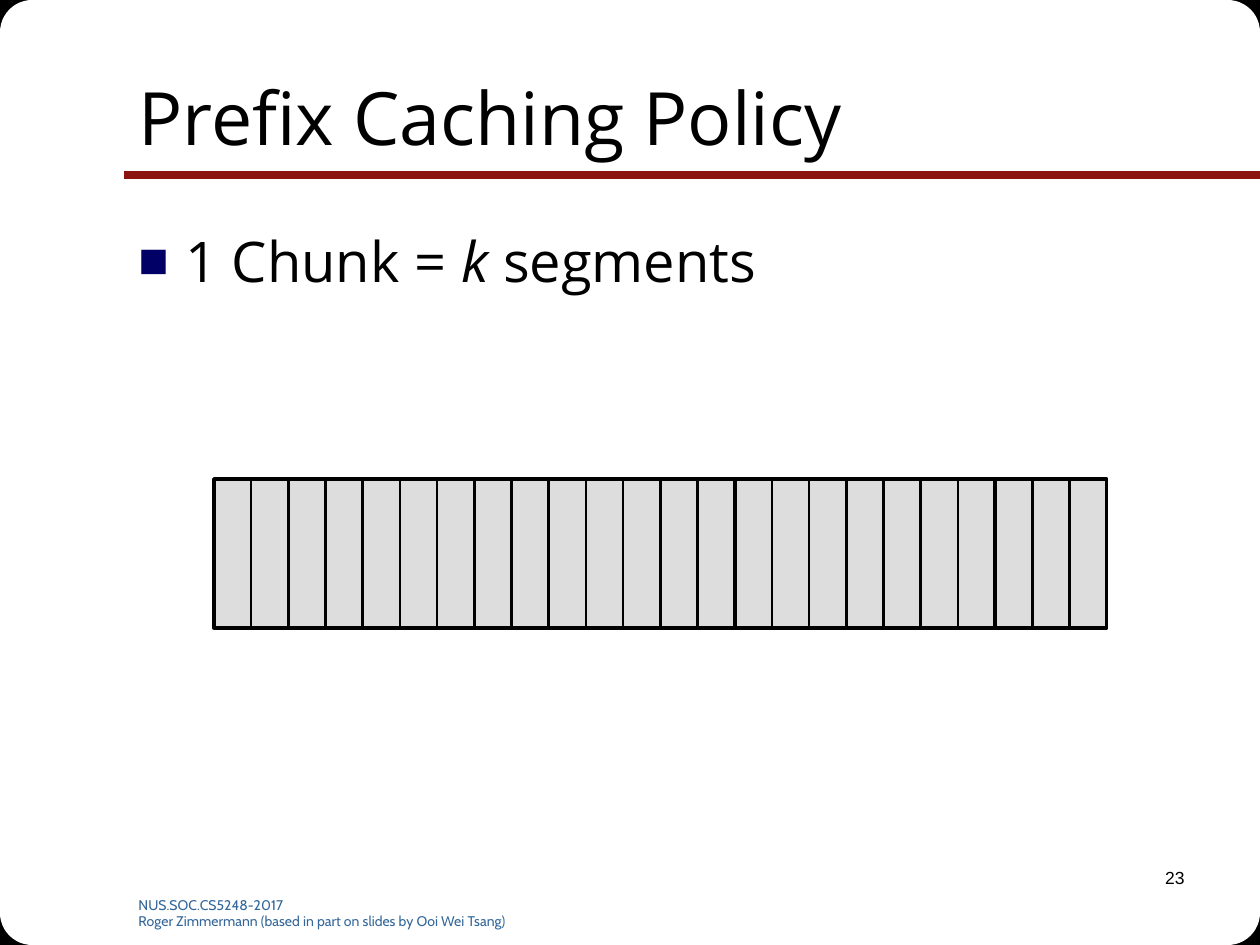
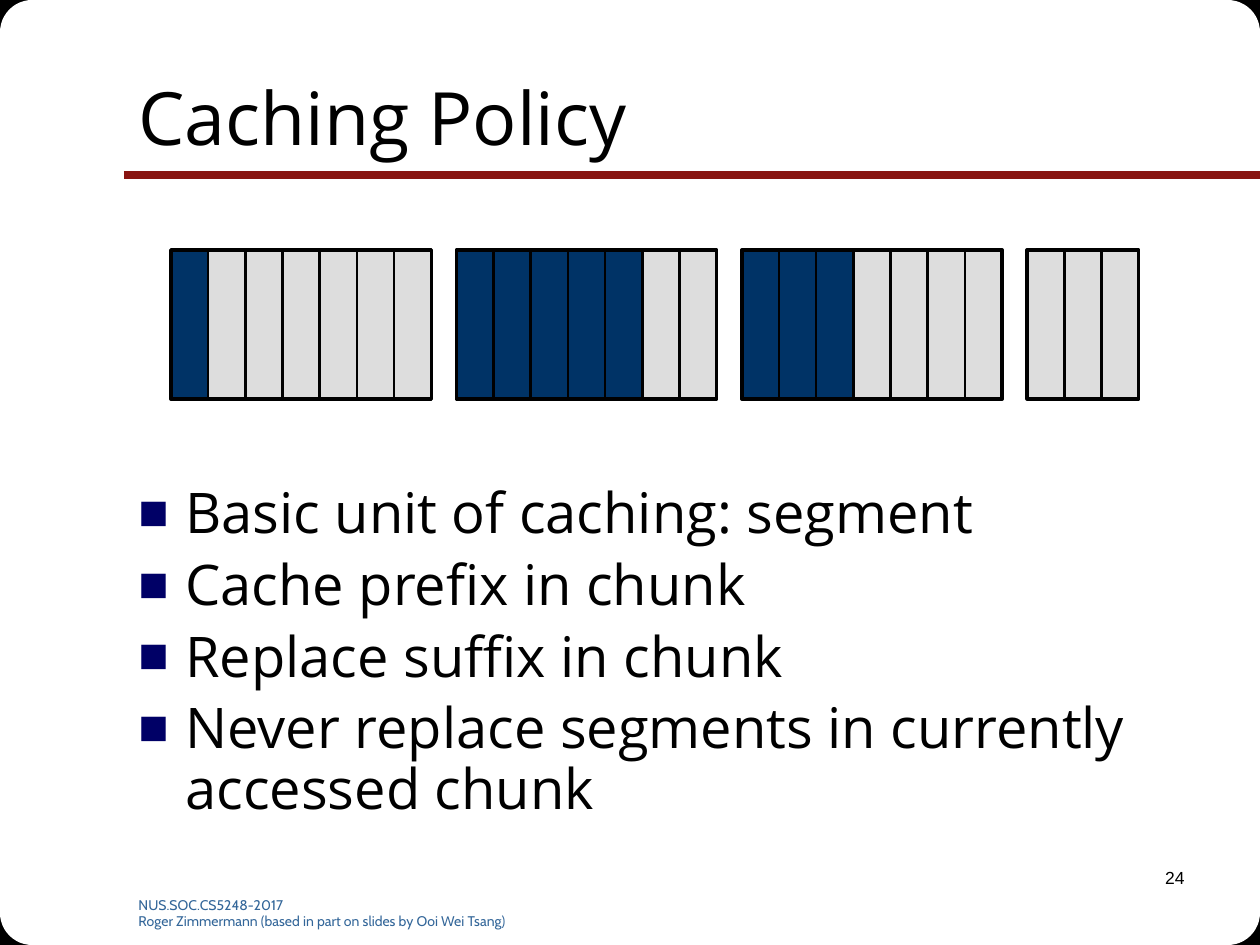
from dataclasses import dataclass
from typing import Any, NamedTuple, Optional

from lxml.etree import SubElement
from pptx import Presentation
from pptx.dml.color import RGBColor as RGB
from pptx.enum.shapes import MSO_CONNECTOR as LINK, MSO_SHAPE as SHAPE
from pptx.enum.text import MSO_ANCHOR as ANCHOR, PP_ALIGN as ALIGN
from pptx.oxml.ns import qn
from pptx.shapes.autoshape import Shape
from pptx.slide import Slide
from pptx.text.text import TextFrame
from pptx.util import Emu, Pt

PX_PER_INCH = 126
PAGE_W, PAGE_H = 1260, 945


def px(length: float) -> Emu:
    return Emu(round(length * 914400 / PX_PER_INCH))


# Theme
class TextStyle(NamedTuple):
    font: str
    size: int
    color: RGB


@dataclass(frozen=True)
class Theme:
    paper: RGB = RGB.from_string("FFFFFF")
    ink: RGB = RGB.from_string("000000")
    rule: RGB = RGB.from_string("891411")
    bullet: str = "000066"
    cached: RGB = RGB.from_string("003366")
    uncached: RGB = RGB.from_string("DDDDDD")
    title: TextStyle = TextStyle("Open Sans", 42, ink)
    body: TextStyle = TextStyle("Open Sans", 32, ink)
    footer: TextStyle = TextStyle("Cabin", 8, RGB.from_string("336699"))
    number: TextStyle = TextStyle("Arial", 10, ink)


THEME = Theme()
FOOTER = [
    "NUS.SOC.CS5248-2017",
    "Roger Zimmermann (based in part on slides by Ooi Wei Tsang)",
]


# Content types
class Box(NamedTuple):
    left: float
    top: float
    width: float
    height: float

    def emu(self) -> list[Emu]:
        return [px(length) for length in self]


class Span(NamedTuple):
    text: str
    italic: bool = False


class Chunk(NamedTuple):
    size: int
    cached: int = 0


class Strip(NamedTuple):
    left: int
    top: int
    gap: int
    chunks: list[Chunk]


class Page(NamedTuple):
    number: int
    title: str
    body: Box
    line_spacing: float
    points: list[list[Span]]
    strip: Strip


SEGMENT_W = 186 / 5  # five segments span 186 px
SEGMENT_H = 149

PAGES = [
    Page(
        23, "Prefix Caching Policy", Box(126, 220, 1071, 624), 1.0,
        [[Span("1 Chunk = "), Span("k ", italic=True), Span("segments")]],
        Strip(214, 479, 0, [Chunk(7), Chunk(7), Chunk(7), Chunk(3)]),
    ),
    Page(
        24, "Caching Policy", Box(126, 479, 1071, 367), 0.9,
        [[Span(text)] for text in (
            "Basic unit of caching: segment",
            "Cache prefix in chunk",
            "Replace suffix in chunk",
            "Never replace segments in currently accessed chunk",
        )],
        Strip(171, 250, 25, [Chunk(7, 1), Chunk(7, 5), Chunk(7, 3), Chunk(3)]),
    ),
]


# Drawing helpers
def set_format(target: Any, values: dict[str, Any]) -> None:
    for name, value in values.items():
        setattr(target, name, value)


def add_block(page: Slide, box: Box, fill: Optional[RGB] = None,
              line_width: float = 0, kind: SHAPE = SHAPE.RECTANGLE) -> Shape:
    block = page.shapes.add_shape(kind, *box.emu())
    block.shadow.inherit = False
    if fill is None:
        block.fill.background()
    else:
        block.fill.solid()
        block.fill.fore_color.rgb = fill
    if line_width:
        block.line.color.rgb = THEME.ink
        block.line.width = Pt(line_width)
    else:
        block.line.fill.background()
    return block


def add_text(page: Slide, box: Box, paras: list[list[Span]], style: TextStyle,
             para_format: Optional[dict[str, Any]] = None,
             anchor: ANCHOR = ANCHOR.TOP) -> TextFrame:
    frame = page.shapes.add_textbox(*box.emu()).text_frame
    set_format(frame, {"word_wrap": True, "vertical_anchor": anchor})
    for index, spans in enumerate(paras):
        para = frame.add_paragraph() if index else frame.paragraphs[0]
        set_format(para, para_format or {})
        for span in spans:
            run = para.add_run()
            run.text = span.text
            set_format(run.font, {"name": style.font, "size": Pt(style.size),
                                  "italic": span.italic})
            run.font.color.rgb = style.color
    return frame


def add_bullets(frame: TextFrame, indent: int) -> None:
    for para in frame.paragraphs:
        props = para._p.get_or_add_pPr()
        props.set("marL", str(px(indent)))
        props.set("indent", str(px(-indent)))
        color = SubElement(props, qn("a:buClr"))
        SubElement(color, qn("a:srgbClr"), val=THEME.bullet)
        SubElement(props, qn("a:buSzPct"), val="90000")
        SubElement(props, qn("a:buFont"), typeface="Arial")
        SubElement(props, qn("a:buChar"), char="■")


# Shared frame: rounded corners, title rule, footer and page number
def add_corners(page: Slide) -> None:
    black_w, black_h, white = 54, 55, 193
    corners = [(right, bottom) for bottom in (0, 1) for right in (0, 1)]
    for right, bottom in corners:
        add_block(page, Box(right * (PAGE_W - black_w),
                            bottom * (PAGE_H - black_h), black_w, black_h),
                  THEME.ink, 0.75)
    for right, bottom in corners:
        add_block(page, Box(right * (PAGE_W - white),
                            bottom * (PAGE_H - white), white, white),
                  THEME.paper, kind=SHAPE.ROUNDED_RECTANGLE)


def add_rule(page: Slide) -> None:
    left, top = 124, 175
    rule = page.shapes.add_connector(LINK.STRAIGHT, px(left), px(top),
                                     px(PAGE_W), px(top))
    rule.line.color.rgb = THEME.rule
    rule.line.width = Pt(4.5)
    SubElement(rule._element.spPr, qn("a:effectLst"))


def add_frame(page: Slide, title: str, number: int) -> None:
    page.background.fill.solid()
    page.background.fill.fore_color.rgb = THEME.paper
    add_corners(page)
    add_rule(page)
    add_text(page, Box(126, 890, 462, 35), [[Span(line)] for line in FOOTER],
             THEME.footer)
    add_text(page, Box(935, 861, 262, 63), [[Span(str(number))]],
             THEME.number, {"alignment": ALIGN.RIGHT})
    add_text(page, Box(126, 38, 1071, 157), [[Span(title)]], THEME.title,
             anchor=ANCHOR.MIDDLE)


# Strip of segments, with an outline round each chunk
def add_strip(page: Slide, strip: Strip) -> None:
    outlines: list[Box] = []
    left: float = strip.left
    for chunk in strip.chunks:
        for index in range(chunk.size):
            fill = THEME.cached if index < chunk.cached else THEME.uncached
            add_block(page, Box(left + index * SEGMENT_W, strip.top,
                                SEGMENT_W, SEGMENT_H), fill, 1.5)
        width = chunk.size * SEGMENT_W
        outlines.append(Box(left, strip.top, width, SEGMENT_H))
        left += width + strip.gap
    for outline in outlines:
        add_block(page, outline, line_width=2)


def main() -> None:
    deck = Presentation()
    set_format(deck, {"slide_width": px(PAGE_W), "slide_height": px(PAGE_H)})
    blank = deck.slide_layouts[6]
    for content in PAGES:
        page = deck.slides.add_slide(blank)
        add_frame(page, content.title, content.number)
        body = add_text(page, content.body, content.points, THEME.body,
                        {"line_spacing": content.line_spacing,
                         "space_before": Pt(6.4)})
        add_bullets(body, indent=47)
        add_strip(page, content.strip)
    deck.save("out.pptx")


if __name__ == "__main__":
    main()
